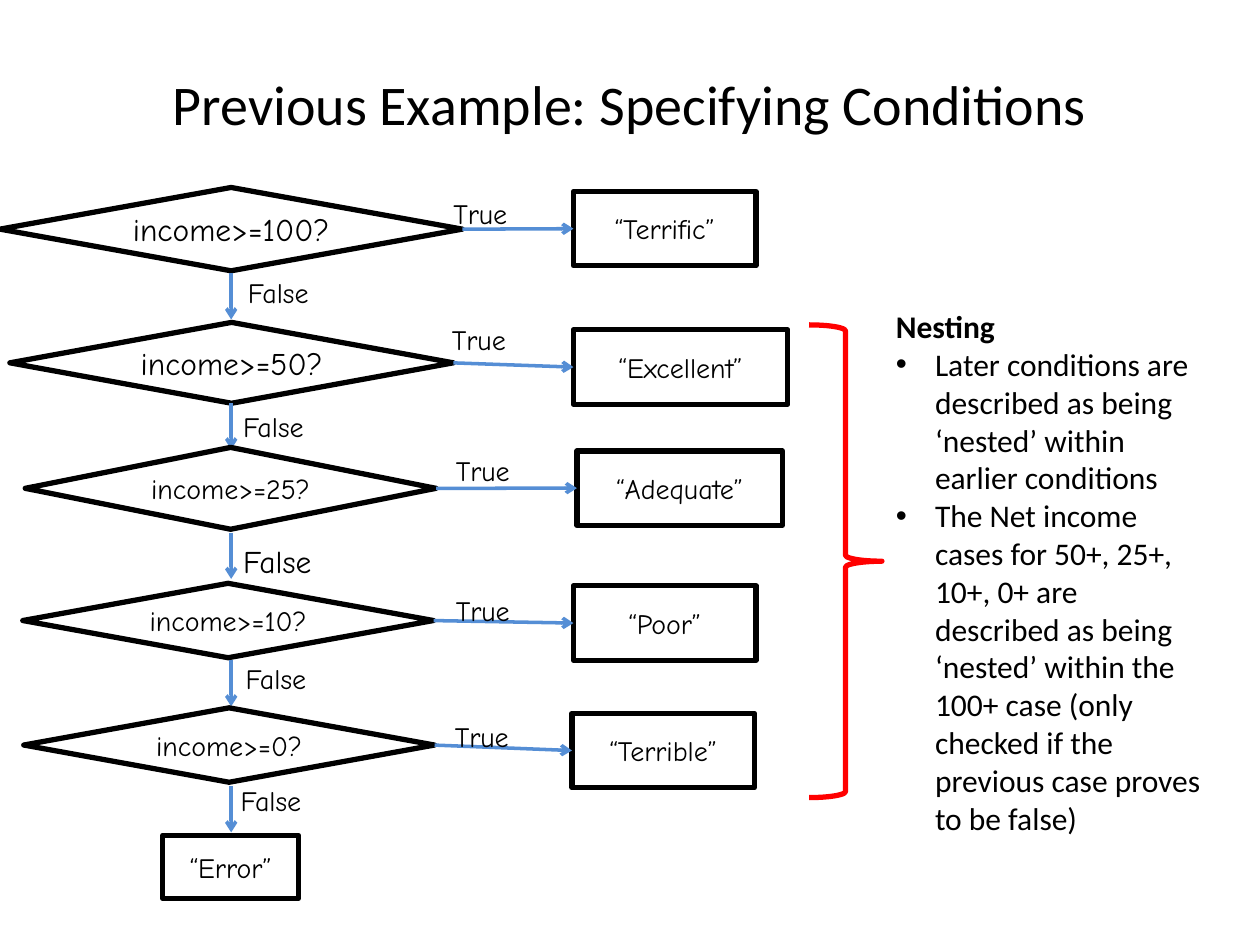
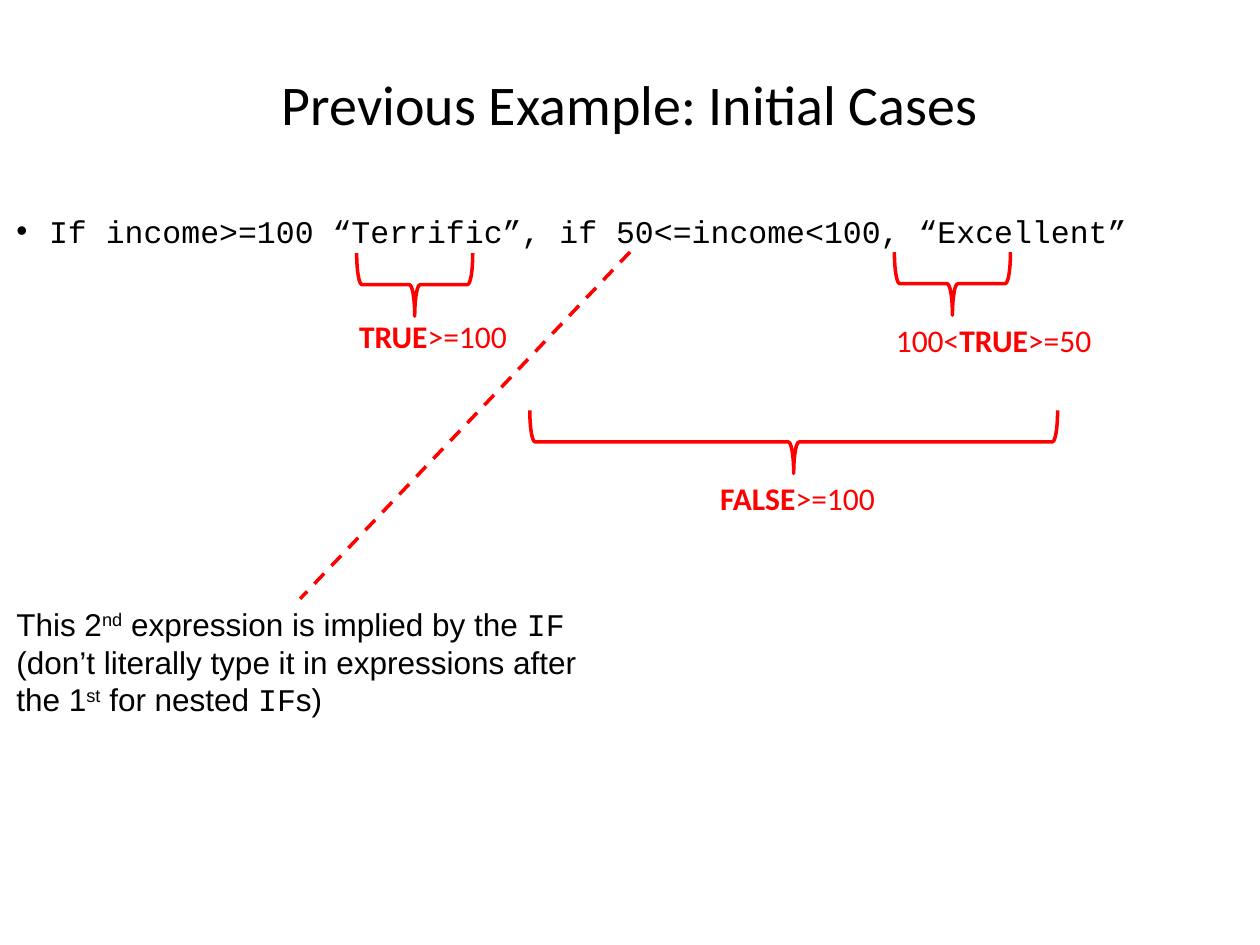
from pptx import Presentation
from pptx.dml.color import RGBColor
from pptx.enum.dml import MSO_LINE_DASH_STYLE as Dash
from pptx.enum.shapes import MSO_CONNECTOR as Connector, MSO_SHAPE as Shape
from pptx.enum.text import MSO_ANCHOR as Anchor, PP_ALIGN as Align
from pptx.oxml.ns import qn
from pptx.util import Cm, Pt
from lxml.etree import SubElement

COLORS = {"ink": "000000", "arrow": "558ED5", "note": "FF0000"}
RGB = {name: RGBColor.from_string(value) for name, value in COLORS.items()}
FLOW_FONT, NOTE_FONT, CODE_FONT, PLAIN_FONT = "Comic Neue", "Calibri", "Courier New", "Arial"
TOP, LEFT, BOTTOM, RIGHT = range(4)


def add_outline(slide, kind, box, color="ink", width=3, text="", size=16):
    """Add an unfilled shape, with centred text if any is given."""
    shape = slide.shapes.add_shape(kind, *map(Cm, box))
    shape.shadow.inherit = False
    shape.fill.background()
    shape.line.color.rgb = RGB[color]
    shape.line.width = Pt(width)
    if text:
        shape.text_frame.vertical_anchor = Anchor.MIDDLE
        paragraph = shape.text_frame.paragraphs[0]
        paragraph.text = text
        paragraph.alignment = Align.CENTER
        font = paragraph.font
        font.name, font.size, font.color.rgb = FLOW_FONT, Pt(size), RGB["ink"]
    return shape


def add_text(slide, box, paragraphs, name, size=18, color="ink", indent=0.79):
    """Each paragraph is (bulleted, runs); each run is (text, style)."""
    frame = slide.shapes.add_textbox(*map(Cm, box)).text_frame
    frame.word_wrap = True
    for index, (bulleted, runs) in enumerate(paragraphs):
        paragraph = frame.add_paragraph() if index else frame.paragraphs[0]
        if bulleted:
            properties = paragraph._p.get_or_add_pPr()
            properties.set("marL", str(Cm(indent)))
            properties.set("indent", str(-Cm(indent)))
            SubElement(properties, qn("a:buFont")).set("typeface", "Arial")
            SubElement(properties, qn("a:buChar")).set("char", "•")
        font = paragraph.font
        font.name, font.size, font.color.rgb = name, Pt(size), RGB[color]
        for text, style in runs:
            run = paragraph.add_run()
            run.text = text
            if style == "bold":
                run.font.bold = True
            elif style == "code":
                run.font.name = CODE_FONT
            elif style == "super":
                run._r.get_or_add_rPr().set("baseline", "30000")
    return frame


presentation = Presentation()
presentation.slide_width, presentation.slide_height = Cm(25.4), Cm(19.05)

# Slides and titles
slides = []
for title_text in ("Previous Example: Specifying Conditions", "Previous Example: Initial Cases"):
    slide = presentation.slides.add_slide(presentation.slide_layouts[5])
    title = slide.shapes.title
    title.left, title.top, title.width, title.height = Cm(1.27), Cm(0.76), Cm(22.86), Cm(2.62)
    title.text_frame.vertical_anchor = Anchor.MIDDLE
    paragraph = title.text_frame.paragraphs[0]
    paragraph.text = title_text
    paragraph.alignment = Align.CENTER
    font = paragraph.font
    font.name, font.size, font.color.rgb = NOTE_FONT, Pt(32), RGB["ink"]
    slides.append(slide)
conditions, cases = slides

# Flowchart: condition, its size, diamond; result, box; True label; False label, its size; arrow top
steps = [
    ("income>=100?", 18, (0, 3.78, 9.32, 1.68), "“Terrific”", (11.56, 3.86, 3.68),
     (8.89, 3.84), (4.75, 5.44), 16, 5.51),
    ("income>=50?", 18, (0.2, 6.5, 8.94, 1.63), "“Excellent”", (11.56, 6.65, 4.32),
     (8.86, 6.38), (4.65, 8.13), 16, 8.13),
    ("income>=25?", 16, (0.51, 9.02, 8.28, 1.65), "“Adequate”", (11.63, 9.09, 4.14),
     (8.94, 9.02), (4.65, 10.8), 18, 10.74),
    ("income>=10?", 16, (0.46, 11.76, 8.28, 1.5), "“Poor”", (11.56, 11.81, 3.68),
     (8.94, 11.84), (4.7, 13.21), 16, 13.31),
    ("income>=0?", 16, (0.48, 14.27, 8.28, 1.5), "“Terrible”", (11.53, 14.38, 3.68),
     (8.92, 14.38), (4.6, 15.67), 16, 15.85),
]
arrows = []
for (condition, size, diamond_box, result, result_box,
     true_at, false_at, false_size, arrow_top) in steps:
    diamond = add_outline(conditions, Shape.DIAMOND, diamond_box, text=condition, size=size)
    outcome = add_outline(conditions, Shape.RECTANGLE, (*result_box, 1.5), text=result)
    true_arrow = conditions.shapes.add_connector(Connector.STRAIGHT, 0, 0, 0, 0)
    true_arrow.begin_connect(diamond, RIGHT)
    true_arrow.end_connect(outcome, LEFT)
    false_arrow = conditions.shapes.add_connector(
        Connector.STRAIGHT, Cm(4.66), Cm(arrow_top), Cm(4.66), Cm(arrow_top + 0.93))
    arrows += [true_arrow, false_arrow]
    add_text(conditions, (*true_at, 1.96, 0.94), [(False, [("True", "")])], FLOW_FONT, 16)
    add_text(conditions, (*false_at, 2.11, 0.94), [(False, [("False", "")])],
             FLOW_FONT, false_size)
add_outline(conditions, Shape.RECTANGLE, (3.28, 16.84, 2.74, 1.27), text="“Error”")

# Note on nesting
add_outline(conditions, Shape.RIGHT_BRACE, (16.31, 6.55, 1.47, 9.53), "note")
add_text(conditions, (17.81, 6.07, 6.81, 9.83), [
    (False, [("Nesting", "bold")]),
    (True, [("Later conditions are described as being ‘nested’ within earlier conditions", "")]),
    (True, [("The Net income cases for 50+, 25+, 10+, 0+ are described as being ‘nested’ "
             "within the 100+ case (only checked if the previous case proves to be false)", "")]),
], NOTE_FONT)

# Expression of the initial cases
expression = add_text(
    cases, (0.08, 4.14, 23.01, 1.7),
    [(True, [("If income>=100 “Terrific”, if 50<=income<100, “Excellent”", "")])],
    CODE_FONT, indent=0.66)
expression.paragraphs[0].space_before = Pt(3.6)

# Braces turned to point down, with their labels
brace_depth = 1.27
labelled_braces = [
    (8.36, 5.74, 2.34, (6.99, 6.27, 3.71), [("TRUE", "bold"), (">=100", "")]),
    (16.0, 8.91, 10.64, (14.27, 9.53, 11.76), [("FALSE", "bold"), (">=100", "")]),
    (19.2, 5.72, 2.34, (17.81, 6.35, 5.28), [("100<", ""), ("TRUE", "bold"), (">=50", "")]),
]
for center_x, center_y, span, label_box, runs in labelled_braces:
    brace = add_outline(
        cases, Shape.RIGHT_BRACE,
        (center_x - brace_depth / 2, center_y - span / 2, brace_depth, span), "note", 2)
    brace.rotation = 90
    add_text(cases, (*label_box, 1.07), [(False, runs)], NOTE_FONT, color="note")

# Remark on the implied expression
add_text(cases, (0.08, 12.07, 11.96, 2.5), [(False, [
    ("This 2", ""), ("nd", "super"), (" expression is implied by the ", ""), ("IF", "code"),
    (" (don’t literally type it in expressions after the 1", ""), ("st", "super"),
    (" for nested ", ""), ("IF", "code"), ("s)", ""),
])], PLAIN_FONT)
pointer = cases.shapes.add_connector(
    Connector.STRAIGHT, Cm(12.7), Cm(5.08), Cm(6.05), Cm(12.07))

# Line styles
for connector in [*arrows, pointer]:
    is_pointer = connector is pointer
    connector.line.color.rgb = RGB["note" if is_pointer else "arrow"]
    connector.line.width = Pt(2)
    if is_pointer:
        connector.line.dash_style = Dash.DASH
    else:
        SubElement(connector.line._get_or_add_ln(), qn("a:tailEnd")).set("type", "arrow")
    SubElement(connector._element.spPr, qn("a:effectLst"))

presentation.save("out.pptx")
